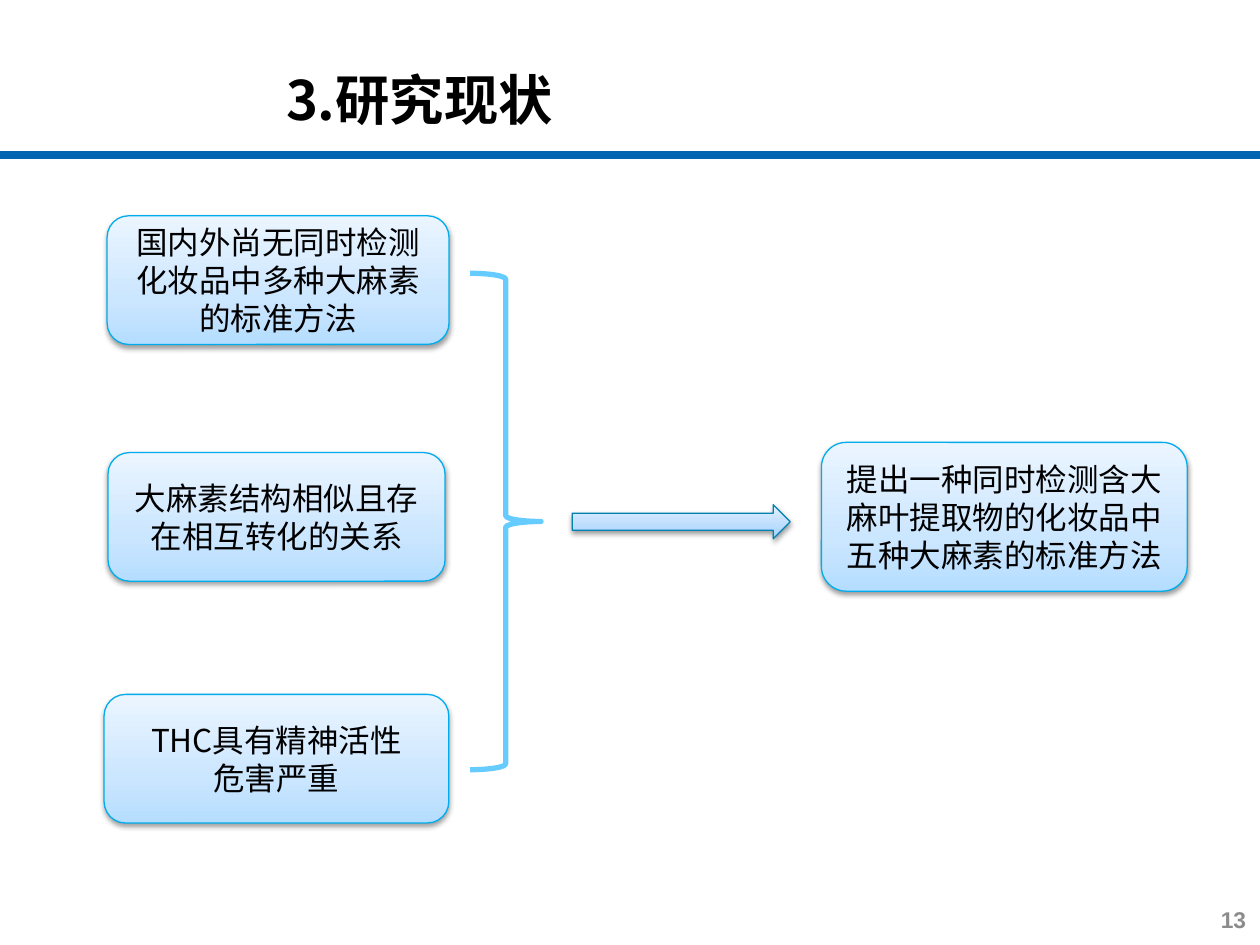
import copy

import pptx
import pptx.dml.color
import pptx.enum.shapes
import pptx.enum.text
import pptx.oxml
import pptx.oxml.ns
import pptx.util

Pt = pptx.util.Pt
Shape = pptx.enum.shapes.MSO_SHAPE
Align = pptx.enum.text.PP_ALIGN
Anchor = pptx.enum.text.MSO_ANCHOR
qn = pptx.oxml.ns.qn

CJK_FONT = "Noto Sans CJK SC"
BOX_COLORS = ["B5DDFF", "CBE6FF", "EBF5FF"]
ARROW_COLORS = ["9CCFFF", "BADCFD", "E4F1FF"]
GRADIENT_POSITIONS = [0, 0.35, 1]
SHADOW = (
    f'<a:outerShdw {pptx.oxml.ns.nsdecls("a")} blurRad="{Pt(3.1)}" dist="{Pt(1.6)}" '
    'dir="5400000" rotWithShape="0"><a:srgbClr val="000000">'
    '<a:alpha val="38000"/></a:srgbClr></a:outerShdw>'
)


def color(value):
    return pptx.dml.color.RGBColor.from_string(value)


def write_text(frame, lines, size, align, font="Arial", text_color="000000", bold=False):
    frame.word_wrap = True
    frame.auto_size = pptx.enum.text.MSO_AUTO_SIZE.NONE
    frame.vertical_anchor = Anchor.MIDDLE
    for index, line in enumerate(lines):
        para = frame.paragraphs[0] if index == 0 else frame.add_paragraph()
        para.text = line
        para.alignment = align
        para.font.size = Pt(size)
        para.font.bold = bold
        para.font.color.rgb = color(text_color)
        para.font.name = font
        east_asian = para.font._element.makeelement(qn("a:ea"), {"typeface": CJK_FONT})
        para.font._element.append(east_asian)


def add_outlined(page, kind, bounds, line_color, width):
    shape = page.shapes.add_shape(kind, *map(Pt, bounds))
    shape.fill.background()
    shape.line.color.rgb = color(line_color)
    shape.line.width = Pt(width)
    shape.shadow.inherit = False
    return shape


def add_glossy(page, kind, bounds, fill_colors, line_color):
    shape = add_outlined(page, kind, bounds, line_color, 0.75)
    shape.fill.gradient()
    shape.fill.gradient_angle = 90
    properties = shape._element.spPr
    stop_list = properties.find(".//" + qn("a:gsLst"))
    stop_list.insert(1, copy.deepcopy(stop_list[0]))
    for stop, position, value in zip(shape.fill.gradient_stops, GRADIENT_POSITIONS, fill_colors):
        stop.position = position
        stop.color.rgb = color(value)
    properties.find(qn("a:effectLst")).append(pptx.oxml.parse_xml(SHADOW))
    return shape


def add_box(page, bounds, lines, font="Arial"):
    box = add_glossy(page, Shape.ROUNDED_RECTANGLE, bounds, BOX_COLORS, "00ACEB")
    write_text(box.text_frame, lines, 18, Align.CENTER, font)


def add_title(page, text):
    title = page.shapes.title
    title.left, title.top, title.width, title.height = map(Pt, (156.25, 31.7, 522.7, 49))
    write_text(title.text_frame, [text], 31, Align.LEFT, CJK_FONT, bold=True)


def add_rule(page):
    rule = page.shapes.add_connector(
        pptx.enum.shapes.MSO_CONNECTOR.STRAIGHT, Pt(0), Pt(88.6), Pt(720), Pt(88.6)
    )
    rule.line.color.rgb = color("0065B0")
    rule.line.width = Pt(4.5)
    properties = rule._element.spPr
    properties.append(properties.makeelement(qn("a:effectLst"), {}))


def add_page_number(page, number):
    box = page.shapes.add_textbox(*map(Pt, (610.6, 510.5, 109.4, 29.5)))
    frame = box.text_frame
    frame.margin_left = frame.margin_right = Pt(8)
    frame.margin_top = frame.margin_bottom = Pt(4)
    write_text(frame, [number], 13, Align.RIGHT, text_color="8C8C8C", bold=True)


def main():
    deck = pptx.Presentation()
    deck.slide_width, deck.slide_height = Pt(720), Pt(540)
    page = deck.slides.add_slide(deck.slide_layouts[5])
    add_rule(page)
    add_title(page, "3.研究现状")
    add_page_number(page, "13")
    add_box(page, (61.2, 123.3, 195.4, 73.5), ["国内外尚无同时检测化妆品中多种大麻素的标准方法"])
    add_box(page, (61.7, 258.6, 192.6, 73.5), ["大麻素结构相似且存在相互转化的关系"])
    add_box(page, (59.5, 396.8, 197, 73.5), ["THC具有精神活性", "危害严重"], CJK_FONT)
    add_box(page, (469.4, 252.8, 209, 85), ["提出一种同时检测含大麻叶提取物的化妆品中五种大麻素的标准方法"])
    add_outlined(page, Shape.RIGHT_BRACE, (268.7, 156.2, 40.5, 283.7), "66CCFF", 3)
    add_glossy(page, Shape.RIGHT_ARROW, (327, 288.4, 124.6, 19.5), ARROW_COLORS, "0081B0")
    deck.save("out.pptx")


if __name__ == "__main__":
    main()
